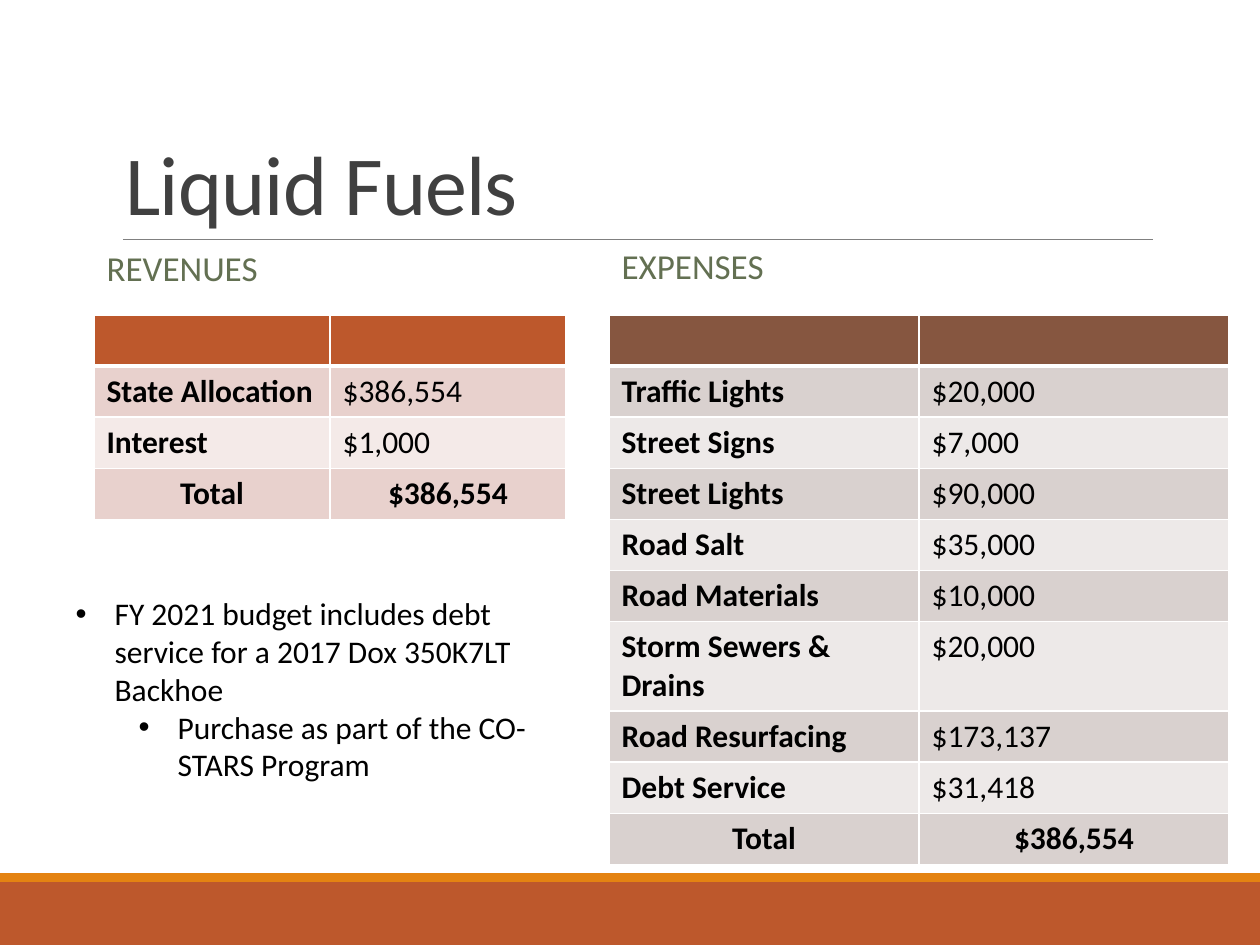
from lxml.etree import SubElement
from pptx import Presentation
from pptx.dml.color import RGBColor
from pptx.enum.shapes import MSO_CONNECTOR, MSO_SHAPE
from pptx.enum.text import MSO_ANCHOR, MSO_AUTO_SIZE, PP_ALIGN
from pptx.oxml.ns import qn
from pptx.util import Emu, Pt

SCALE = 914400 / 126
ROW_H = 51

REVENUES = [
    ("State Allocation", "$386,554"),
    ("Interest", "$1,000"),
    ("Total", "$386,554"),
]
EXPENSES = [
    ("Traffic Lights", "$20,000"),
    ("Street Signs", "$7,000"),
    ("Street Lights", "$90,000"),
    ("Road Salt", "$35,000"),
    ("Road Materials", "$10,000"),
    ("Storm Sewers & Drains", "$20,000"),
    ("Road Resurfacing", "$173,137"),
    ("Debt Service", "$31,418"),
    ("Total", "$386,554"),
]
NOTES = [
    (0, "FY 2021 budget includes debt service for a 2017 Dox 350K7LT Backhoe"),
    (1, "Purchase as part of the CO-STARS Program"),
]


def px(n):
    return Emu(round(n * SCALE))


def rgb(color):
    return RGBColor.from_string(color)


def style(p, size, color, bold=False, align=PP_ALIGN.LEFT, spacing=1.0):
    p.alignment = align
    p.line_spacing = spacing
    p.space_before = p.space_after = Pt(0)
    for r in p.runs:
        r.font.name = "Calibri"
        r.font.size = Pt(size)
        r.font.bold = bold
        r.font.color.rgb = rgb(color)


def place(sp, x, y, w, h, anchor):
    sp.left, sp.top, sp.width, sp.height = px(x), px(y), px(w), px(h)
    tf = sp.text_frame
    tf.word_wrap = True
    tf.auto_size = MSO_AUTO_SIZE.NONE
    tf.vertical_anchor = anchor
    return tf


def add_bar(s, y, h, color):
    sp = s.shapes.add_shape(MSO_SHAPE.RECTANGLE, 0, px(y), px(1260), px(h))
    sp.shadow.inherit = False
    sp.fill.solid()
    sp.fill.fore_color.rgb = rgb(color)
    sp.line.fill.background()


def add_rule(s, x1, x2, y):
    line = s.shapes.add_connector(MSO_CONNECTOR.STRAIGHT, px(x1), px(y), px(x2), px(y))
    line.line.color.rgb = rgb("808080")
    line.line.width = Pt(0.5)
    SubElement(line._element.spPr, qn("a:effectLst"))


def set_title(s, text):
    tf = place(s.shapes.title, 113, 39, 1040, 200, MSO_ANCHOR.BOTTOM)
    tf.text = text
    p = tf.paragraphs[0]
    style(p, 48, "404040", spacing=0.85)
    p.runs[0].font._element.set("spc", "-50")


def set_heading(sp, text, x, y):
    tf = place(sp, x, y, 504, 53, MSO_ANCHOR.MIDDLE)
    tf.text = text
    style(tf.paragraphs[0], 20, "637052", spacing=0.9)


def set_bullets(sp, items):
    tf = place(sp, 63, 588, 525, 204, MSO_ANCHOR.TOP)
    for i, (level, text) in enumerate(items):
        p = tf.paragraphs[0] if i == 0 else tf.add_paragraph()
        p.text = text
        p.level = level
        style(p, 18, "000000")
        pPr = p._p.get_or_add_pPr()
        pPr.set("marL", str(px(39 + 63 * level)))
        pPr.set("indent", str(-px(39)))
        SubElement(pPr, qn("a:buFont"), typeface="Arial")
        SubElement(pPr, qn("a:buChar"), char="•")


def set_borders(cell, top, bottom):
    tcPr = cell._tc.get_or_add_tcPr()
    for side, width in (("L", 1), ("R", 1), ("T", top), ("B", bottom)):
        ln = SubElement(tcPr, qn("a:ln" + side), w=str(Pt(width)))
        fill = SubElement(ln, qn("a:solidFill"))
        SubElement(fill, qn("a:srgbClr"), val="FFFFFF")


def add_budget(s, x, col_w, rows, head, bands):
    """Budget table with an empty header row, banded rows and a centred total."""
    table = s.shapes.add_table(len(rows) + 1, 2, px(x), px(315), px(2 * col_w),
                               px(ROW_H * (len(rows) + 1))).table
    for col in table.columns:
        col.width = px(col_w)
    for i, values in enumerate([("", "")] + rows):
        table.rows[i].height = px(ROW_H)
        total = values[0] == "Total"
        for j, text in enumerate(values):
            cell = table.cell(i, j)
            set_borders(cell, 3 if i == 1 else 1, 3 if i == 0 else 1)
            cell.fill.solid()
            cell.fill.fore_color.rgb = rgb(bands[(i - 1) % 2] if i else head)
            if text:
                cell.text = text
                style(cell.text_frame.paragraphs[0], 18, "000000", total or j == 0,
                      PP_ALIGN.CENTER if total else PP_ALIGN.LEFT)


def main():
    prs = Presentation()
    prs.slide_width, prs.slide_height = px(1260), px(945)
    s = prs.slides.add_slide(prs.slide_layouts.get_by_name("Comparison"))
    ph = {sp.placeholder_format.idx: sp for sp in s.placeholders}

    # Footer bars and title rule
    add_bar(s, 882, 63, "BD582C")
    add_bar(s, 873, 9, "E48312")
    add_rule(s, 123, 1153, 239)

    # Title and headings
    set_title(s, "Liquid Fuels")
    set_heading(ph[1], "REVENUES", 94, 244)
    set_heading(ph[3], "EXPENSES", 609, 242)

    # Budget tables
    add_budget(s, 94, 236, REVENUES, "BD582C", ("E8D1CD", "F4EAE8"))
    add_budget(s, 609, 310, EXPENSES, "865640", ("D9D1CF", "EDE9E8"))

    # Notes below the revenues
    set_bullets(ph[2], NOTES)
    ph[4]._element.getparent().remove(ph[4]._element)

    prs.save("out.pptx")


if __name__ == "__main__":
    main()
